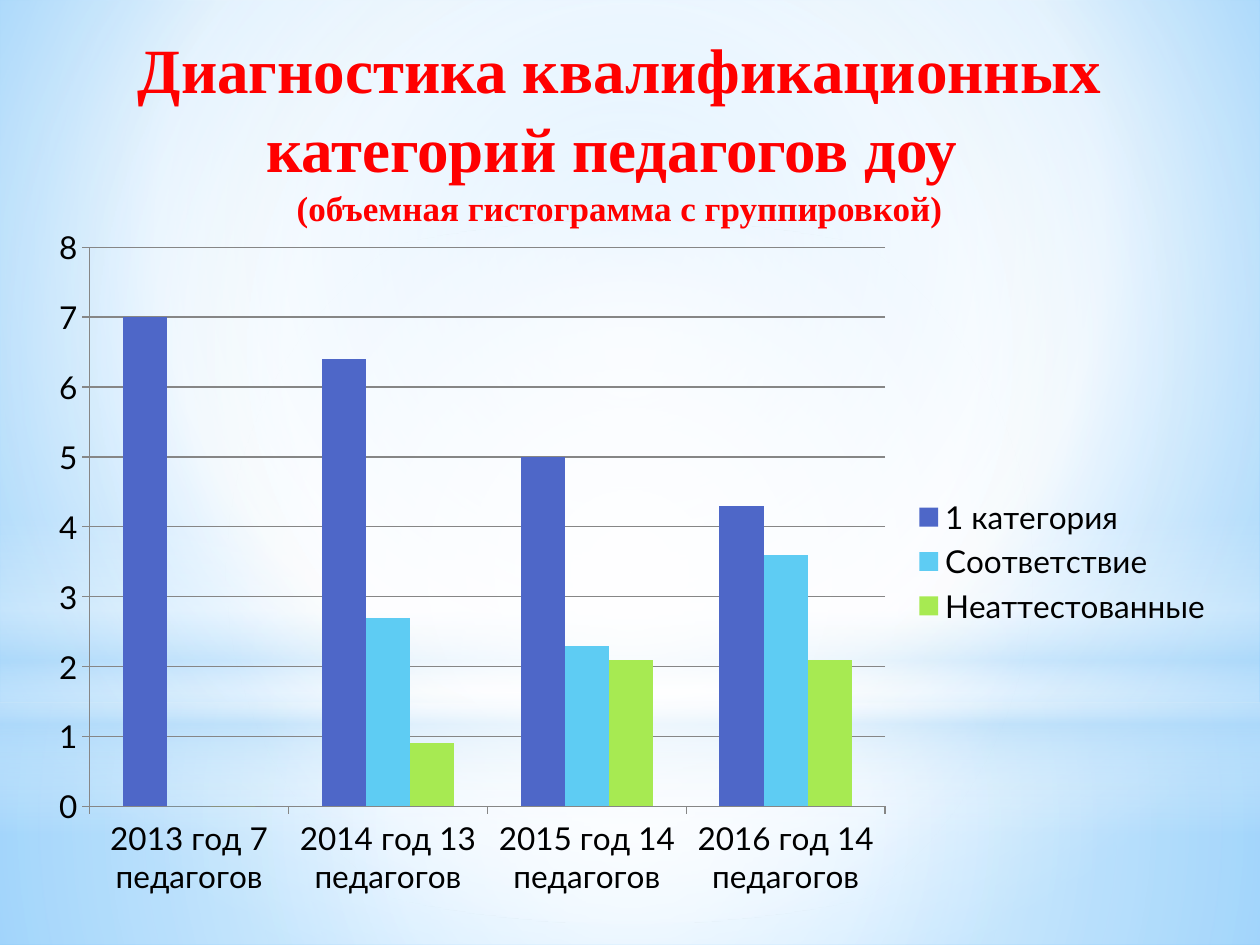
from lxml.etree import SubElement
from pptx import Presentation
from pptx.chart.data import CategoryChartData as ChartData
from pptx.dml.color import RGBColor
from pptx.enum.chart import XL_CHART_TYPE as ChartType, XL_LEGEND_POSITION as LegendPosition
from pptx.enum.chart import XL_TICK_MARK as TickMark
from pptx.enum.shapes import MSO_SHAPE as Preset
from pptx.enum.text import MSO_ANCHOR as Anchor, PP_ALIGN as Align
from pptx.oxml.ns import qn
from pptx.util import Cm, Pt

COLOURS = {
    "title": "FF0000",
    "text": "000000",
    "line": "868686",
    "white": "FFFFFF",
    "haze": "B4DCFA",
    "sky": "9ED5FF",
    "deep_sky": "5BB9FF",
    "first": "4E67C8",
    "matching": "5ECCF3",
    "uncertified": "A7EA52",
}
CENTRE = (50, 50, 50, 50)


def set_values(target, values):
    for name, value in values.items():
        setattr(target, name, value)


class SlideBuilder:
    title_font = "Times New Roman"
    chart_font = "Lato"

    def __init__(self, presentation):
        self.slide = presentation.slides.add_slide(presentation.slide_layouts[6])

    def colour(self, name):
        return RGBColor.from_string(COLOURS[name])

    def gradient(self, fill, element, stops, focus=None):
        fill.gradient()
        gradient = element.find(".//" + qn("a:gradFill"))
        for child in list(gradient):
            gradient.remove(child)
        stop_list = SubElement(gradient, qn("a:gsLst"))
        for position, name, opacity in stops:
            stop = SubElement(stop_list, qn("a:gs"), pos=str(position * 1000))
            colour = SubElement(stop, qn("a:srgbClr"), val=COLOURS[name])
            if opacity < 100:
                SubElement(colour, qn("a:alpha"), val=str(opacity * 1000))
        if focus:
            circle = SubElement(gradient, qn("a:path"), path="circle")
            sides = {side: str(share * 1000) for side, share in zip("ltrb", focus)}
            SubElement(circle, qn("a:fillToRect"), **sides)
        else:
            SubElement(gradient, qn("a:lin"), ang="5400000", scaled="0")

    def background(self, stops, focus):
        self.gradient(self.slide.background.fill, self.slide.element, stops, focus)

    def glow(self, preset, top, height, stops, focus=CENTRE):
        shape = self.slide.shapes.add_shape(preset, 0, Cm(top), Cm(25.4), Cm(height))
        shape.shadow.inherit = False
        shape.line.fill.background()
        self.gradient(shape.fill, shape.element, stops, focus)

    def title(self, box, pieces):
        frame = self.slide.shapes.add_textbox(*map(Cm, box)).text_frame
        set_values(frame, {"word_wrap": True, "vertical_anchor": Anchor.TOP, "margin_top": Cm(0.23)})
        paragraph = frame.paragraphs[0]
        set_values(paragraph, {"alignment": Align.CENTER, "line_spacing": 1.04})
        for index, (text, size) in enumerate(pieces):
            if index:
                paragraph.add_line_break()
            run = paragraph.add_run()
            run.text = text
            set_values(run.font, {"name": self.title_font, "size": Pt(size), "bold": True})
            run.font.color.rgb = self.colour("title")

    def column_chart(self, box, categories, series):
        data = ChartData()
        data.categories = categories
        for name, values, _ in series:
            data.add_series(name, values)
        chart = self.slide.shapes.add_chart(
            ChartType.COLUMN_CLUSTERED, *map(Cm, box), data
        ).chart
        set_values(chart, {"has_title": False, "has_legend": True})
        set_values(chart.font, {"name": self.chart_font, "size": Pt(18)})
        chart.font.color.rgb = self.colour("text")
        set_values(chart.legend, {"position": LegendPosition.RIGHT, "include_in_layout": False})
        plot = chart.plots[0]
        set_values(plot, {"gap_width": 150, "overlap": 0, "vary_by_categories": False})
        for column, (_, _, colour) in zip(plot.series, series):
            column.format.fill.solid()
            column.format.fill.fore_color.rgb = self.colour(colour)
        value_axis, category_axis = chart.value_axis, chart.category_axis
        set_values(value_axis, {"minimum_scale": 0, "maximum_scale": 8, "major_unit": 1,
                                "has_major_gridlines": True})
        for axis in (value_axis, category_axis):
            set_values(axis, {"major_tick_mark": TickMark.OUTSIDE, "minor_tick_mark": TickMark.NONE})
        for part in (value_axis, category_axis, value_axis.major_gridlines):
            part.format.line.color.rgb = self.colour("line")
            part.format.line.width = Pt(0.75)


def main():
    presentation = Presentation()
    set_values(presentation, {"slide_width": Cm(25.4), "slide_height": Cm(19.05)})
    builder = SlideBuilder(presentation)
    builder.background(
        [(0, "sky", 100), (60, "white", 100), (100, "deep_sky", 100)], (20, 10, 20, 60)
    )
    builder.glow(Preset.RECTANGLE, 14.17, 4.88,
                 [(0, "white", 91), (37, "white", 76), (100, "haze", 79)])
    builder.glow(Preset.RECTANGLE, 0, 14.17,
                 [(0, "white", 89), (48, "white", 62), (100, "haze", 79)])
    builder.glow(Preset.RECTANGLE, 10.46, 6.35,
                 [(0, "white", 0), (29, "white", 30), (45, "haze", 40),
                  (55, "white", 26), (65, "haze", 60), (100, "white", 0)], None)
    builder.glow(Preset.OVAL, 4.45, 14.17, [(0, "white", 100), (56, "white", 0)])
    builder.title(
        (1.9, 0.33, 21.18, 4.6),
        [("Диагностика квалификационных категорий педагогов доу ", 36),
         ("(объемная гистограмма с группировкой)", 20)],
    )
    staff = {2013: 7, 2014: 13, 2015: 14, 2016: 14}
    builder.column_chart(
        (0.71, 4.32, 24, 14),
        [f"{year} год {count} педагогов" for year, count in staff.items()],
        [("1 категория", (7, 6.4, 5, 4.3), "first"),
         ("Соответствие", (0, 2.7, 2.3, 3.6), "matching"),
         ("Неаттестованные", (0, 0.9, 2.1, 2.1), "uncertified")],
    )
    presentation.save("out.pptx")


if __name__ == "__main__":
    main()
